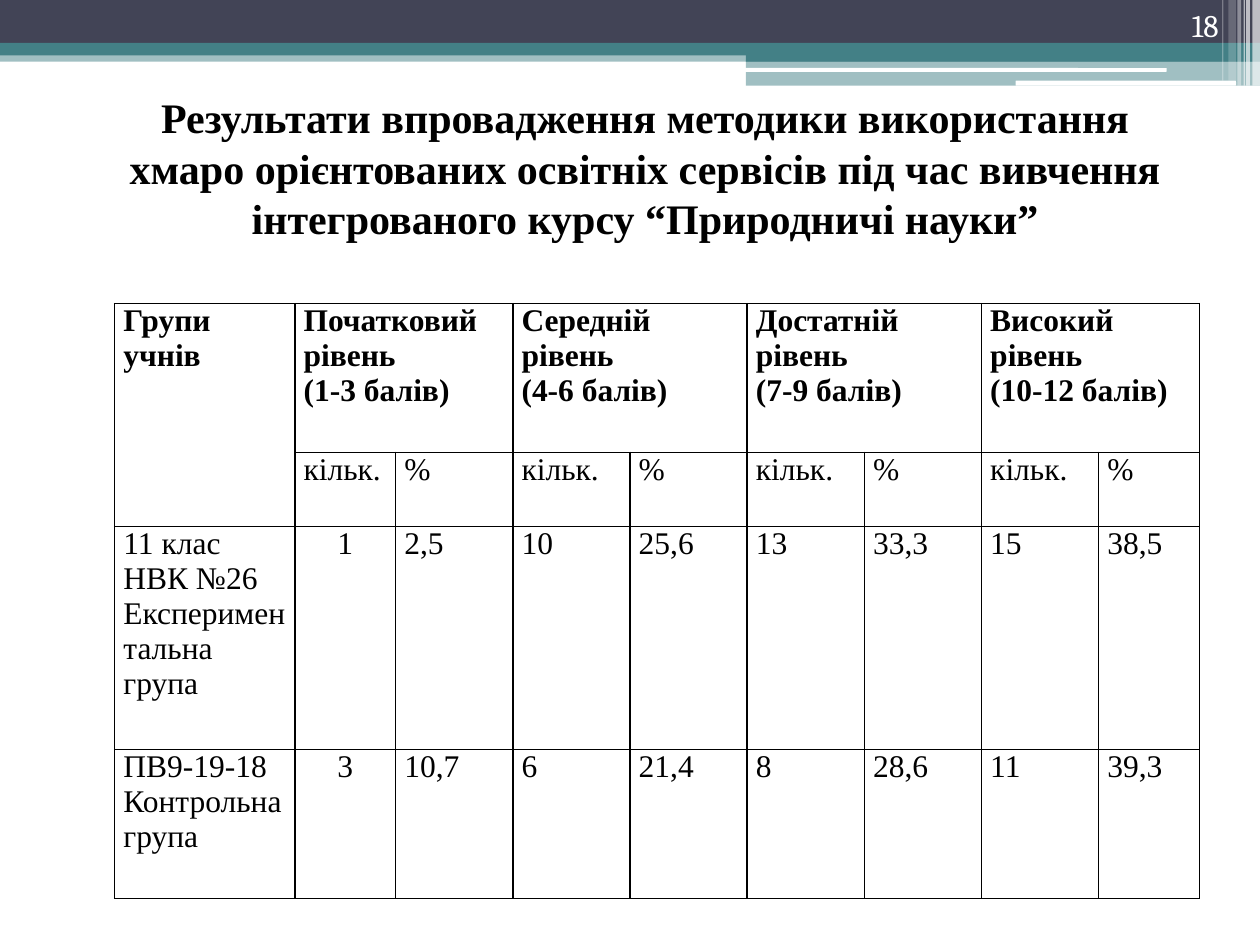
"""Build the slide with the table of results by level of achievement."""
from lxml.etree import SubElement
from pptx import Presentation
from pptx.dml.color import RGBColor
from pptx.enum.shapes import MSO_SHAPE
from pptx.enum.text import MSO_ANCHOR, PP_ALIGN
from pptx.oxml import parse_xml
from pptx.oxml.ns import nsdecls, qn
from pptx.util import Inches, Pt

NAVY = RGBColor(0x42, 0x44, 0x56)
TEAL = RGBColor(0x43, 0x80, 0x86)
WHITE = RGBColor(0xFF, 0xFF, 0xFF)
BLACK = RGBColor(0, 0, 0)
SERIF = "Times New Roman"

prs = Presentation()
prs.slide_width, prs.slide_height = Inches(10), Inches(7.5)
s = prs.slides.add_slide(prs.slide_layouts[6])


def write(tf, lines, align, fmt):
    tf.word_wrap = True
    for i, line in enumerate(lines):
        p = tf.paragraphs[0] if i == 0 else tf.add_paragraph()
        p.alignment = align
        r = p.add_run()
        r.text = line
        r.font.color.rgb = fmt["color"]
        for name in ("name", "size", "bold"):
            setattr(r.font, name, fmt[name])


RECT, ROUND = MSO_SHAPE.RECTANGLE, MSO_SHAPE.ROUNDED_RECTANGLE
bars = [
    (RECT, 0, 0.4, 10, 0.09, TEAL, 50),
    (RECT, 0, 0, 10, 0.34, NAVY, 100),
    (RECT, 0, 0.34, 10, 0.1, TEAL, 100),
    (RECT, 5.92, 0.39, 4.08, 0.1, TEAL, 100),
    (RECT, 5.92, 0.48, 4.08, 0.2, TEAL, 50),
    (ROUND, 5.91, 0.54, 3.35, 0.03, WHITE, 100),
    (ROUND, 8.06, 0.64, 1.75, 0.04, WHITE, 100),
    (RECT, 9.94, 0, 0.06, 0.68, WHITE, 65),
    (RECT, 9.89, 0, 0.03, 0.68, WHITE, 65),
    (RECT, 9.87, 0, 0.01, 0.68, WHITE, 60),
    (RECT, 9.82, 0, 0.03, 0.68, WHITE, 40),
    (RECT, 9.75, 0, 0.06, 0.64, WHITE, 20),
    (RECT, 9.7, 0, 0.01, 0.64, WHITE, 30),
]
for kind, x, y, w, h, color, opacity in bars:
    sp = s.shapes.add_shape(kind, Inches(x), Inches(y), Inches(w), Inches(h))
    sp.shadow.inherit = False
    sp.fill.solid()
    sp.fill.fore_color.rgb = color
    sp.line.fill.background()
    if opacity < 100:
        clr = sp.fill._xPr.find(".//" + qn("a:srgbClr"))
        SubElement(clr, qn("a:alpha"), val=str(opacity * 1000))

cols = [1.43, 0.8] + [0.93] * 6 + [0.8]
rows = [1.18, 0.59, 1.77, 1.18]
levels = [
    "Початковий рівень \n(1-3 балів)",
    "Середній рівень\n(4-6 балів)",
    "Достатній рівень\n(7-9 балів)",
    "Високий рівень\n(10-12 балів)",
]
header = ["Групи учнів"]
for level in levels:
    header += [level, ""]
data = [
    header,
    [""] + ["кільк.", "%"] * 4,
    ["11 клас \nНВК №26\nЕкспериментальна група",
     "1", "2,5", "10", "25,6", "13", "33,3", "15", "38,5"],
    ["ПВ9-19-18\nКонтрольна група",
     "3", "10,7", "6", "21,4", "8", "28,6", "11", "39,3"],
]
frame = s.shapes.add_table(len(rows), len(cols), Inches(0.91), Inches(2.41),
                           Inches(sum(cols)), Inches(sum(rows)))
table = frame.table
for col, w in zip(table.columns, cols):
    col.width = Inches(w)
for row, h in zip(table.rows, rows):
    row.height = Inches(h)
table.cell(0, 0).merge(table.cell(1, 0))
for j in range(1, len(cols), 2):
    table.cell(0, j).merge(table.cell(0, j + 1))

margins = {"margin_left": Inches(0.07), "margin_right": Inches(0.07),
           "margin_top": 0, "margin_bottom": 0}
for i, values in enumerate(data):
    for j, value in enumerate(values):
        cell = table.cell(i, j)
        for name, margin in margins.items():
            setattr(cell, name, margin)
        tcPr = cell._tc.get_or_add_tcPr()
        for side in "LRTB":
            tcPr.append(parse_xml(
                f'<a:ln{side} w="12700" {nsdecls("a")}><a:solidFill>'
                f'<a:srgbClr val="{BLACK}"/></a:solidFill></a:ln{side}>'))
        cell.fill.background()
        if value:
            align = PP_ALIGN.CENTER if i > 1 and j == 1 else PP_ALIGN.JUSTIFY
            write(cell.text_frame, value.split("\n"), align,
                  {"name": SERIF, "size": Pt(18), "bold": i == 0, "color": BLACK})

title = ("Результати впровадження методики використання хмаро орієнтованих "
         "освітніх сервісів під час вивчення інтегрованого курсу “Природничі науки”")
texts = [
    (0.83, 0.68, 8.58, 1.31, title, PP_ALIGN.CENTER, MSO_ANCHOR.TOP,
     {"name": SERIF, "size": Pt(24), "bold": True, "color": BLACK}),
    (8.94, 0, 0.83, 0.4, "18", PP_ALIGN.RIGHT, MSO_ANCHOR.BOTTOM,
     {"name": "Cambria", "size": Pt(18), "bold": False, "color": WHITE}),
]
for x, y, w, h, text, align, anchor, fmt in texts:
    tf = s.shapes.add_textbox(Inches(x), Inches(y), Inches(w), Inches(h)).text_frame
    tf.vertical_anchor = anchor
    write(tf, [text], align, fmt)

prs.save("out.pptx")
